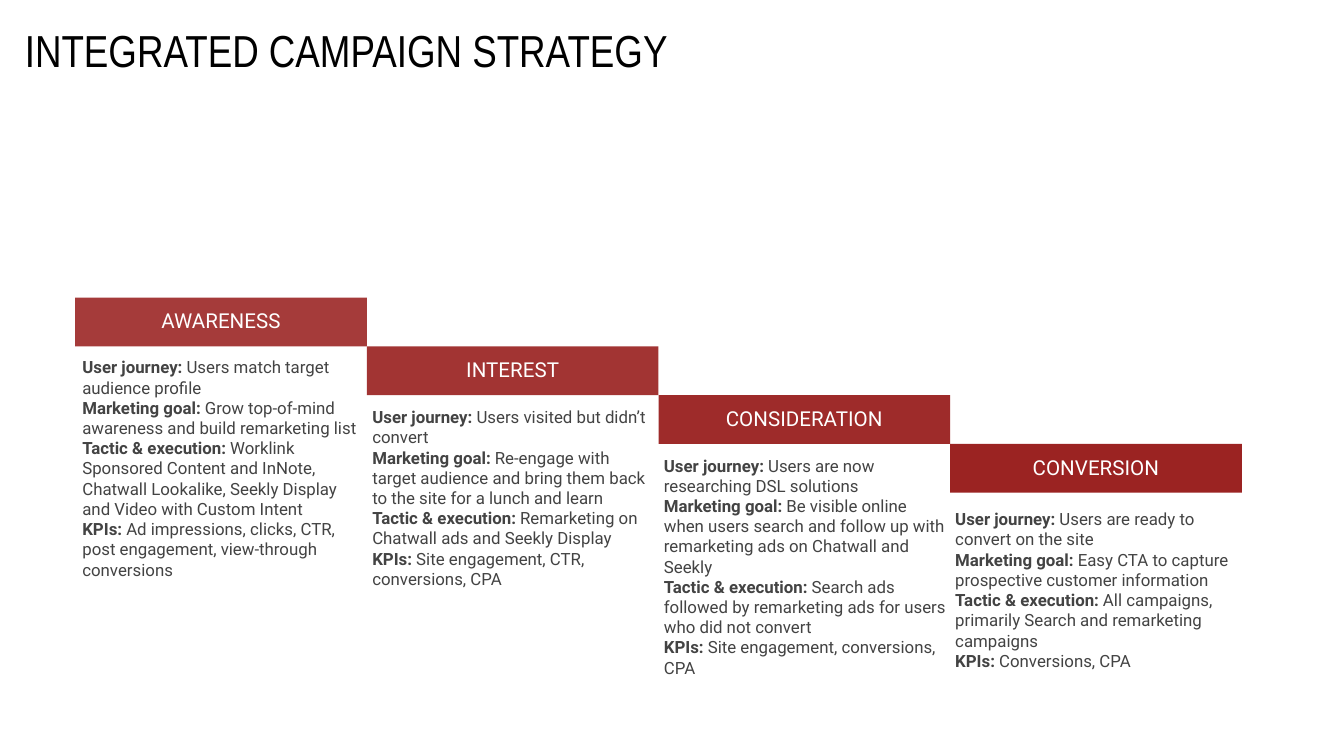
from lxml.etree import SubElement
from pptx import Presentation
from pptx.dml.color import RGBColor
from pptx.enum.shapes import MSO_SHAPE as Shape
from pptx.enum.text import MSO_ANCHOR as Anchor, MSO_AUTO_SIZE as AutoSize, PP_ALIGN as Align
from pptx.oxml.ns import qn
from pptx.util import Pt

PX = 2286  # 400 px to the inch
COLORS = {"title": "000000", "bar": "9B2322", "stage": "FFFFFF", "detail": "434343"}
STEP_W, STEP_H = 868, 145
FIRST_LEFT, FIRST_TOP = 224, 886
TOPICS = ("User journey:", "Marketing goal:", "Tactic & execution:", "KPIs:")

# Stage, bar opacity in percent, details box relative to the bar (left, top, height), details
STAGES = [
    ("AWARENESS", 89, (6, 162, 704), (
        "Users match target audience profile",
        "Grow top-of-mind awareness and build remarketing list",
        "Worklink Sponsored Content and InNote, Chatwall Lookalike, "
        "Seekly Display and Video with Custom Intent",
        "Ad impressions, clicks, CTR, post engagement, view-through conversions")),
    ("INTEREST", 92, (1, 165, 612), (
        "Users visited but didn’t convert",
        "Re-engage with target audience and bring them back to the site for a lunch and learn",
        "Remarketing on Chatwall ads and Seekly Display",
        "Site engagement, CTR, conversions, CPA")),
    ("CONSIDERATION", 96, (1, 164, 656), (
        "Users are now researching DSL solutions",
        "Be visible online when users search and follow up with remarketing ads "
        "on Chatwall and Seekly",
        "Search ads followed by remarketing ads for users who did not convert",
        "Site engagement, conversions, CPA")),
    ("CONVERSION", 100, (0, 179, 612), (
        "Users are ready to convert on the site",
        "Easy CTA to capture prospective customer information",
        "All campaigns, primarily Search and remarketing campaigns",
        "Conversions, CPA")),
]


def emu(*lengths):
    return [length * PX for length in lengths]


def set_up_frame(frame, inset, anchor=Anchor.TOP):
    frame.word_wrap = True
    frame.auto_size = AutoSize.NONE
    frame.vertical_anchor = anchor
    frame.margin_left = frame.margin_right = inset * PX
    frame.margin_top = frame.margin_bottom = inset * PX


def add_run(paragraph, text, size, color, font="Roboto", bold=False):
    run = paragraph.add_run()
    run.text = text
    run.font.name = font
    run.font.size = Pt(size)
    run.font.bold = bold
    run.font.color.rgb = RGBColor.from_string(COLORS[color])


def add_frame(slide, left, top, width, height):
    frame = slide.shapes.add_textbox(*emu(left, top, width, height)).text_frame
    set_up_frame(frame, 15)
    return frame


def place_title(slide, left, top, width, height):
    title = slide.shapes.title
    title.left, title.top, title.width, title.height = emu(left, top, width, height)
    set_up_frame(title.text_frame, 40, Anchor.MIDDLE)
    heading = title.text_frame.paragraphs[0]
    heading.alignment = Align.LEFT
    add_run(heading, "INTEGRATED CAMPAIGN STRATEGY", 24, "title", "Arial Narrow")


def add_bar(slide, left, top, width, height, opacity):
    bar = slide.shapes.add_shape(Shape.RECTANGLE, *emu(left, top, width, height))
    bar.shadow.inherit = False
    bar.line.fill.background()
    bar.fill.solid()
    bar.fill.fore_color.rgb = RGBColor.from_string(COLORS["bar"])
    if opacity < 100:
        color = bar.fill._xPr.find(qn("a:solidFill"))[0]
        SubElement(color, qn("a:alpha"), val=str(opacity * 1000))


def add_details(slide, left, top, width, height, details):
    frame = add_frame(slide, left, top, width, height)
    for number, (topic, detail) in enumerate(zip(TOPICS, details)):
        paragraph = frame.add_paragraph() if number else frame.paragraphs[0]
        add_run(paragraph, topic, 9, "detail", bold=True)
        add_run(paragraph, f" {detail}", 9, "detail")


def add_stage(slide, left, top, width, height, stage):
    """Place one step of the staircase: bar, stage name and details below."""
    name, opacity, (shift, gap, details_height), details = stage
    add_bar(slide, left, top, width, height, opacity)
    label = add_frame(slide, left + 97, top + 17, width - 194, height - 33).paragraphs[0]
    label.alignment = Align.CENTER
    add_run(label, name, 11, "stage")
    add_details(slide, left + shift, top + gap, width + 2, details_height, details)


def main():
    deck = Presentation()
    deck.slide_width, deck.slide_height = emu(4000, 2250)
    slide = deck.slides.add_slide(deck.slide_layouts[5])
    place_title(slide, 34, 52, 3932, 192)
    for number, stage in enumerate(STAGES):
        add_stage(slide, FIRST_LEFT + number * STEP_W, FIRST_TOP + number * STEP_H,
                  STEP_W, STEP_H, stage)
    deck.save("out.pptx")


if __name__ == "__main__":
    main()
